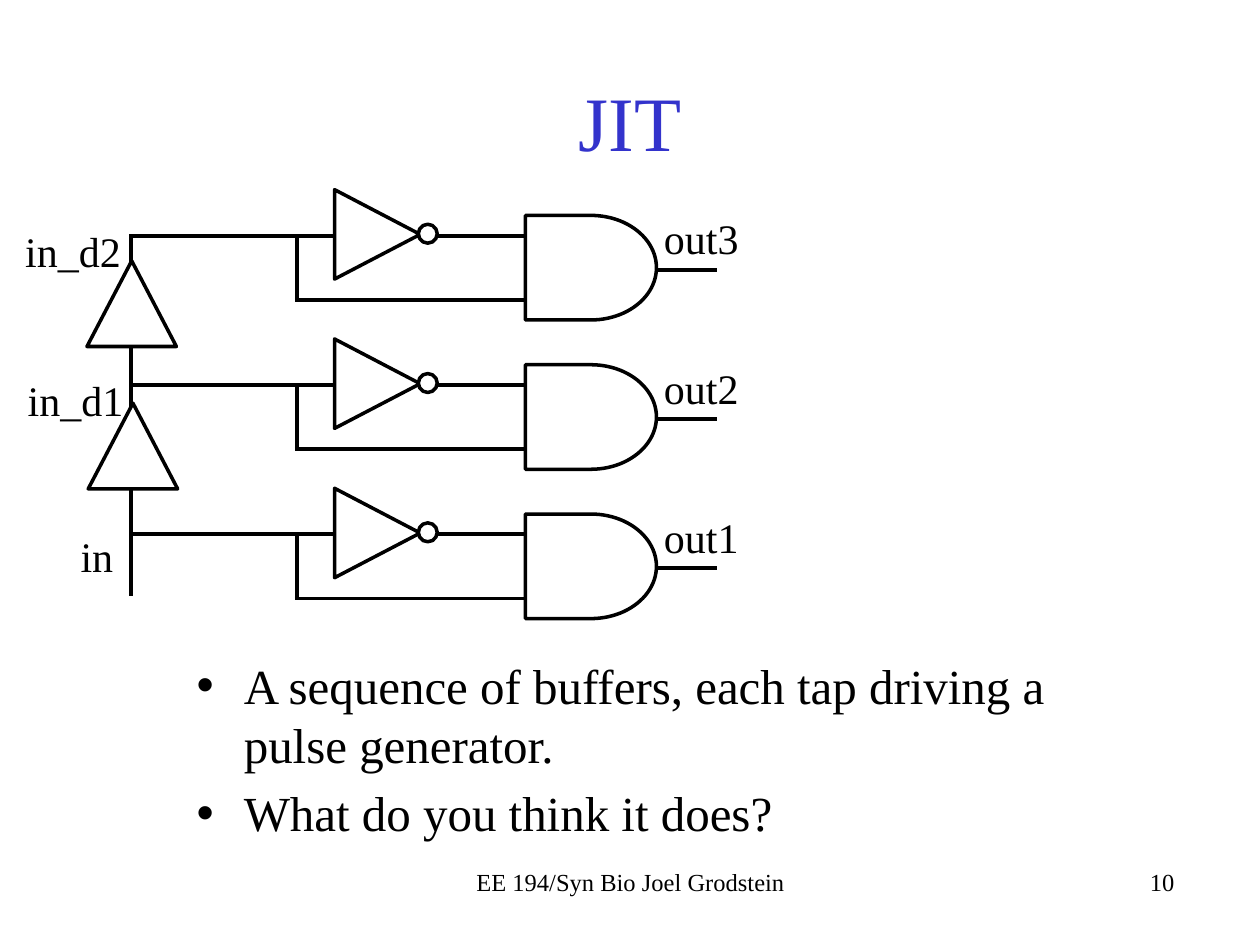
from lxml.etree import SubElement
from pptx import Presentation
from pptx.dml.color import RGBColor
from pptx.enum.shapes import MSO_CONNECTOR, MSO_SHAPE
from pptx.enum.text import MSO_ANCHOR, MSO_AUTO_SIZE, PP_ALIGN
from pptx.oxml.ns import qn
from pptx.util import Inches, Pt

COLORS = {"ink": "000000", "title": "3333CC", "paper": "FFFFFF"}
FONT = "Times New Roman"

prs = Presentation()
prs.slide_width, prs.slide_height = Inches(10), Inches(7.5)
col, row = prs.slide_width / 100, prs.slide_height / 75
s = prs.slides.add_slide(prs.slide_layouts[1])


def grid(x, y, w, h):
    return round(x * col), round(y * row), round(w * col), round(h * row)


def write(sp, text, size=24, color="ink", align=PP_ALIGN.LEFT, anchor=MSO_ANCHOR.TOP, wrap=True, inset=None):
    tf = sp.text_frame
    tf.text = text
    tf.word_wrap = wrap
    tf.auto_size = MSO_AUTO_SIZE.NONE
    tf.vertical_anchor = anchor
    if inset is not None:
        tf.margin_left = tf.margin_right = tf.margin_top = tf.margin_bottom = inset
    for p in tf.paragraphs:
        p.alignment = align
        for r in p.runs:
            r.font.name = FONT
            r.font.size = Pt(size)
            r.font.color.rgb = RGBColor.from_string(COLORS[color])


title, body = s.placeholders
title.left, title.top, title.width, title.height = grid(7.5, 3.3, 85, 12.5)
body.left, body.top, body.width, body.height = grid(14.6, 51.5, 77.8, 15.8)
write(title, "JIT", size=44, color="title", align=PP_ALIGN.CENTER, anchor=MSO_ANCHOR.MIDDLE)
write(body, "A sequence of buffers, each tap driving a pulse generator.\nWhat do you think it does?", size=28)

for x, text, align in [
    (34.2, "EE 194/Syn Bio Joel Grodstein", PP_ALIGN.CENTER),
    (62.5, "10", PP_ALIGN.RIGHT),
]:
    write(s.shapes.add_textbox(*grid(x, 68.3, 31.7, 5)), text, size=14, align=align)

wires = [(10.4, 47.3, 10.4, 18.6)]
gates = [
    (MSO_SHAPE.FLOWCHART_MERGE, 180, (7, 32, 7.1, 6.8)),
    (MSO_SHAPE.FLOWCHART_MERGE, 180, (6.9, 20.7, 7.1, 6.8)),
]
labels = [("in", 6.4, 42.1, 2.6), ("in_d1", 2.2, 29.7, 7.7), ("in_d2", 2, 17.9, 7.7)]

for i in range(3):
    y = 42.4 - 11.85 * i
    wires += [
        (10.4, y, 43.9, y),
        (23.4, y + 5.1, 43.1, y + 5.1),
        (23.6, y, 23.6, y + 5.1),
        (56.9, y + 2.7, 48.8, y + 2.7),
    ]
    gates += [
        (MSO_SHAPE.FLOWCHART_DELAY, 0, (41.7, y - 1.6, 10.4, 8.3)),
        (MSO_SHAPE.FLOWCHART_MERGE, 270, (26.4, y - 3.5, 7.1, 6.8)),
        (MSO_SHAPE.OVAL, 0, (33.2, y - 0.9, 1.5, 1.5)),
    ]
    labels.append((f"out{i + 1}", 52.7, y - 1.8, 6))

for x1, y1, x2, y2 in wires:
    wire = s.shapes.add_connector(MSO_CONNECTOR.STRAIGHT, *grid(x1, y1, x2, y2))
    wire.line.color.rgb = RGBColor.from_string(COLORS["ink"])
    wire.line.width = Pt(2.25)
    SubElement(wire._element.spPr, qn("a:effectLst"))

for kind, angle, box in gates:
    gate = s.shapes.add_shape(kind, *grid(*box))
    gate.rotation = angle
    gate.shadow.inherit = False
    gate.fill.solid()
    gate.fill.fore_color.rgb = RGBColor.from_string(COLORS["paper"])
    gate.line.color.rgb = RGBColor.from_string(COLORS["ink"])
    gate.line.width = Pt(2)

for text, x, y, w in labels:
    write(s.shapes.add_textbox(*grid(x, y, w, 4)), text, wrap=False, inset=0)

prs.save("out.pptx")
